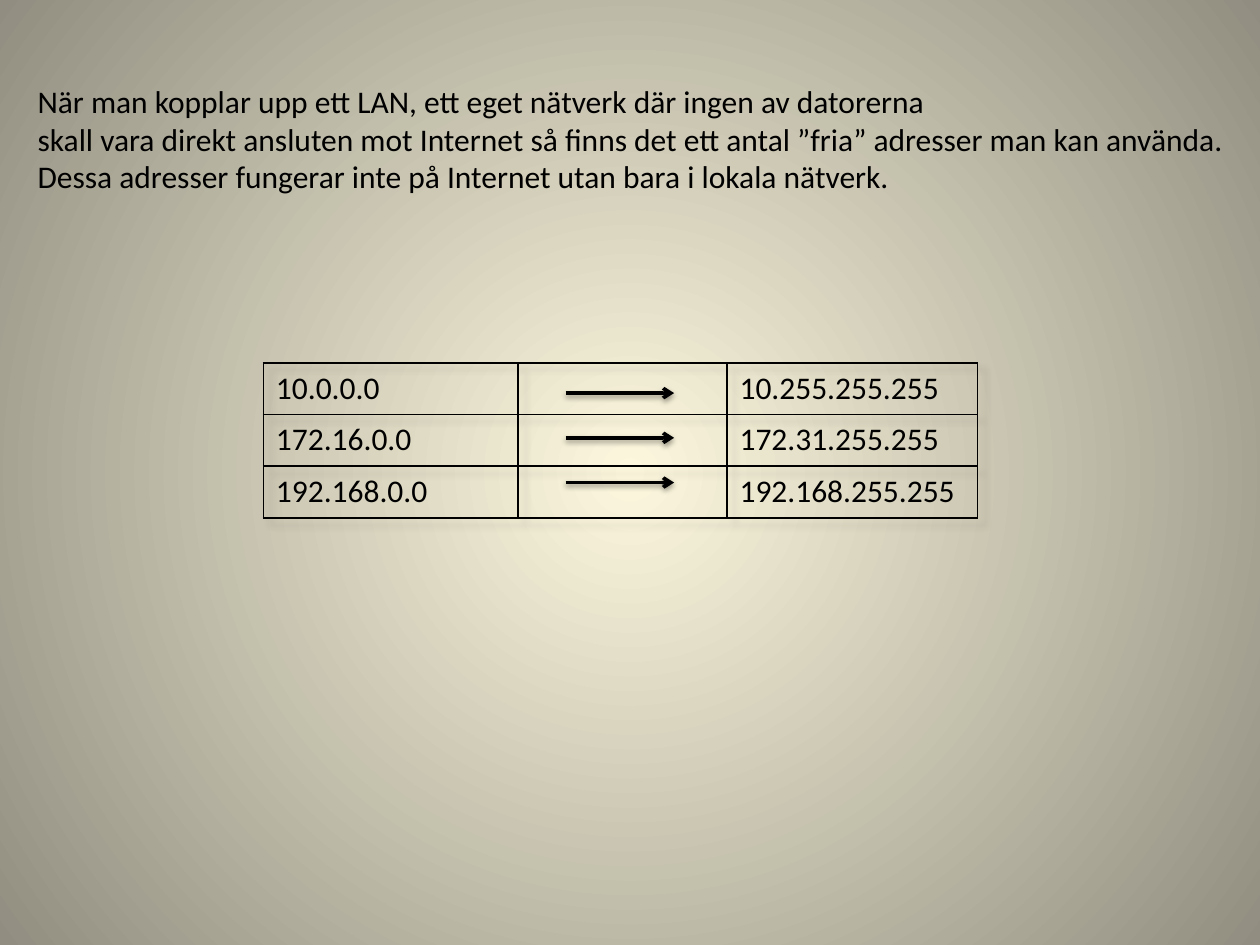
from dataclasses import dataclass

from pptx import Presentation
from pptx.dml.color import RGBColor
from pptx.enum.shapes import MSO_CONNECTOR
from pptx.oxml import parse_xml
from pptx.oxml.ns import nsdecls, qn
from pptx.util import Inches, Pt

INTRO = [
    "När man kopplar upp ett LAN, ett eget nätverk där ingen av datorerna",
    "skall vara direkt ansluten mot Internet så finns det ett antal ”fria” adresser man kan använda.",
    "Dessa adresser fungerar inte på Internet utan bara i lokala nätverk.",
]
ADDRESS_RANGES = [
    ("10.0.0.0", "10.255.255.255"),
    ("172.16.0.0", "172.31.255.255"),
    ("192.168.0.0", "192.168.255.255"),
]


@dataclass(frozen=True)
class Theme:
    font: str = "Calibri"
    size: int = 18
    ink: str = "000000"
    center: str = "FCF7DD"
    edge: str = "918E81"
    border: int = 1
    arrow: int = 2


THEME = Theme()
WIDTH, HEIGHT = 10, 7.5
INTRO_BOX = (0.2, 0.6, 9.73, 1.01)
TABLE_LEFT, TABLE_TOP = 2.09, 2.88
COLUMNS = (2.02, 1.66, 1.99)
ROW_HEIGHT = 0.41
ARROW_START, ARROW_END = 4.49, 5.35
ARROW_TOP, ARROW_STEP = 3.12, 0.355
ARROW_SHADOW = {"opacity": 38, "blur": 3.1, "distance": 1.6, "angle": 90}
TABLE_SHADOW = {"opacity": 15, "blur": 4, "distance": 5, "angle": 45}


def write(paragraph, text):
    span = paragraph.add_run()
    span.text = text
    formats = {"name": THEME.font, "size": Pt(THEME.size), "bold": False}
    for name, value in formats.items():
        setattr(span.font, name, value)
    span.font.color.rgb = RGBColor.from_string(THEME.ink)


def shadow_effect(opacity, blur, distance, angle):
    return parse_xml(
        f'<a:effectLst {nsdecls("a")}><a:outerShdw blurRad="{Pt(blur)}" '
        f'dist="{Pt(distance)}" dir="{angle * 60000}" rotWithShape="0">'
        f'<a:srgbClr val="{THEME.ink}"><a:alpha val="{opacity * 1000}"/></a:srgbClr>'
        "</a:outerShdw></a:effectLst>")


def paint_background(page):
    """Fill the page with a gradient that spreads from its center."""
    stops = "".join(
        f'<a:gs pos="{position}"><a:srgbClr val="{color}"/></a:gs>'
        for position, color in ((0, THEME.center), (100000, THEME.edge)))
    page.element.cSld.insert(0, parse_xml(
        f'<p:bg {nsdecls("p", "a")}><p:bgPr><a:gradFill><a:gsLst>{stops}</a:gsLst>'
        '<a:path path="circle"><a:fillToRect l="50000" t="50000" r="50000" b="50000"/>'
        "</a:path></a:gradFill><a:effectLst/></p:bgPr></p:bg>"))


def add_intro(page):
    frame = page.shapes.add_textbox(*map(Inches, INTRO_BOX)).text_frame
    frame.word_wrap = False
    for index, line in enumerate(INTRO):
        write(frame.add_paragraph() if index else frame.paragraphs[0], line)


def outline(cell):
    cell.fill.background()
    properties = cell._tc.get_or_add_tcPr()
    for index, side in enumerate(("lnL", "lnR", "lnT", "lnB")):
        properties.insert(index, parse_xml(
            f'<a:{side} {nsdecls("a")} w="{Pt(THEME.border)}"><a:solidFill>'
            f'<a:srgbClr val="{THEME.ink}"/></a:solidFill></a:{side}>'))


def add_address_table(page):
    count = len(ADDRESS_RANGES)
    size = (TABLE_LEFT, TABLE_TOP, sum(COLUMNS), count * ROW_HEIGHT)
    table = page.shapes.add_table(count, len(COLUMNS), *map(Inches, size)).table
    table.first_row = table.horz_banding = False
    table._tbl.tblPr.insert(0, shadow_effect(**TABLE_SHADOW))
    for column, width in zip(table.columns, COLUMNS):
        column.width = Inches(width)
    for row, (first, last) in enumerate(ADDRESS_RANGES):
        write(table.cell(row, 0).text_frame.paragraphs[0], first)
        write(table.cell(row, 2).text_frame.paragraphs[0], last)
    for cell in table.iter_cells():
        outline(cell)


def add_arrow(page, top):
    ends = (ARROW_START, top, ARROW_END, top)
    arrow = page.shapes.add_connector(MSO_CONNECTOR.STRAIGHT, *map(Inches, ends))
    arrow.line.width = Pt(THEME.arrow)
    arrow.line.color.rgb = RGBColor.from_string(THEME.ink)
    properties = arrow.element.spPr
    properties.find(qn("a:ln")).append(
        parse_xml(f'<a:tailEnd {nsdecls("a")} type="arrow"/>'))
    properties.append(shadow_effect(**ARROW_SHADOW))


def main():
    deck = Presentation()
    deck.slide_width, deck.slide_height = Inches(WIDTH), Inches(HEIGHT)
    page = deck.slides.add_slide(deck.slide_layouts[6])
    paint_background(page)
    add_intro(page)
    add_address_table(page)
    for row in range(len(ADDRESS_RANGES)):
        add_arrow(page, ARROW_TOP + row * ARROW_STEP)
    deck.save("out.pptx")


if __name__ == "__main__":
    main()
